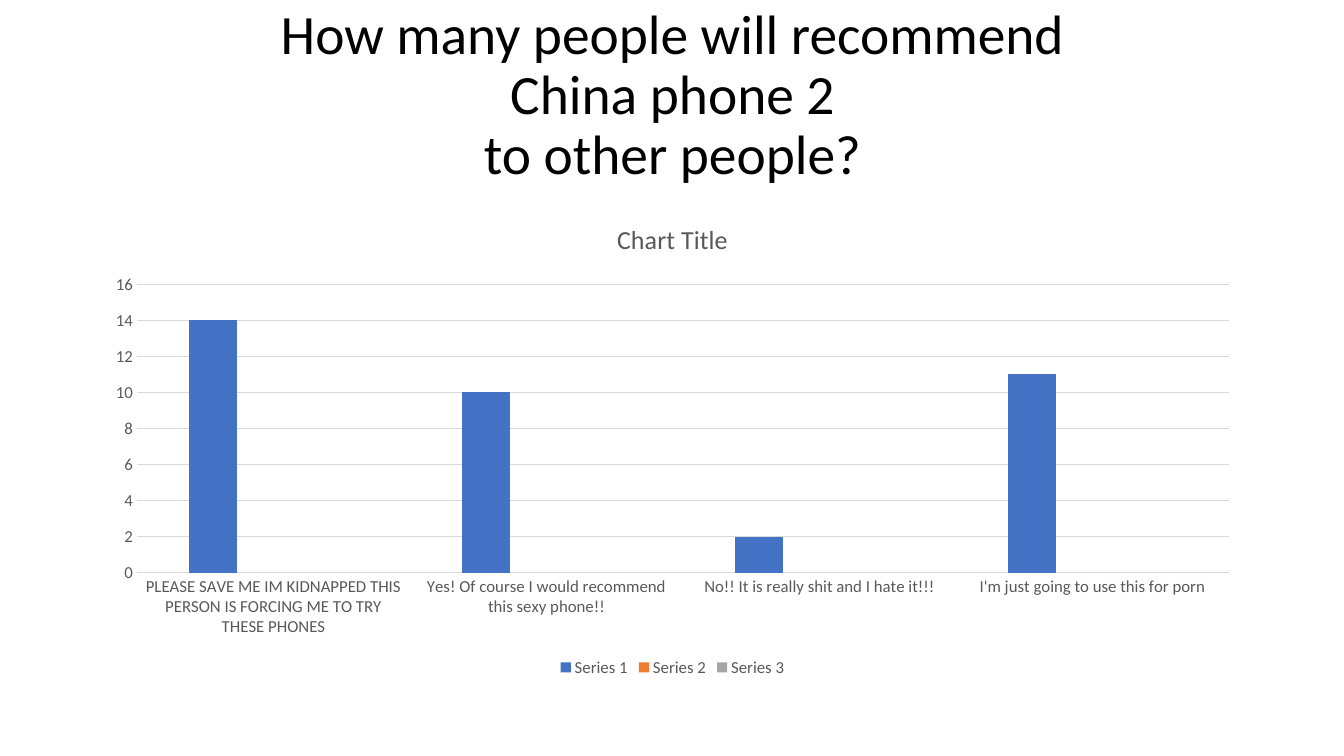
import pptx
import pptx.chart.data
import pptx.dml.color
import pptx.enum.chart
import pptx.enum.text
import pptx.util
from pptx.util import Inches

FONT = "Calibri"
COLORS = {"title": "000000", "label": "595959", "grid": "D9D9D9"}
ANSWERS = [
    "PLEASE SAVE ME IM KIDNAPPED THIS PERSON IS FORCING ME TO TRY THESE PHONES",
    "Yes! Of course I would recommend this sexy phone!!",
    "No!! It is really shit and I hate it!!!",
    "I'm just going to use this for porn",
]
SERIES = {
    "Series 1": ("4472C4", [14, 10, 2, 11]),
    "Series 2": ("ED7D31", [None] * len(ANSWERS)),
    "Series 3": ("A5A5A5", [None] * len(ANSWERS)),
}


def rgb(value):
    return pptx.dml.color.RGBColor.from_string(value)


def set_attributes(target, values):
    for name, value in values.items():
        setattr(target, name, value)


def style_font(font, size, color):
    set_attributes(font, {"name": FONT, "size": pptx.util.Pt(size), "bold": False})
    font.color.rgb = rgb(color)


def style_line(line):
    line.color.rgb = rgb(COLORS["grid"])
    line.width = pptx.util.Pt(0.75)


def place_question(slide, left, top, width, height):
    question = slide.shapes.title
    set_attributes(question, {"left": left, "top": top, "width": width, "height": height})
    frame = question.text_frame
    frame.text = "How many people will recommend\vChina phone 2\vto other people?"
    set_attributes(frame, {
        "word_wrap": True,
        "auto_size": pptx.enum.text.MSO_AUTO_SIZE.NONE,
        "vertical_anchor": pptx.enum.text.MSO_ANCHOR.MIDDLE,
    })
    paragraph = frame.paragraphs[0]
    set_attributes(paragraph, {
        "alignment": pptx.enum.text.PP_ALIGN.CENTER,
        "line_spacing": 0.9,
    })
    for run in paragraph.runs:
        style_font(run.font, 39.6, COLORS["title"])


def place_answer_chart(slide, left, top, width, height):
    data = pptx.chart.data.CategoryChartData()
    data.categories = ANSWERS
    for name, (_, votes) in SERIES.items():
        data.add_series(name, votes)
    chart = slide.shapes.add_chart(
        pptx.enum.chart.XL_CHART_TYPE.COLUMN_CLUSTERED, left, top, width, height, data
    ).chart
    style_font(chart.font, 10, COLORS["title"])

    heading = chart.chart_title.text_frame
    heading.text = "Chart Title"
    style_font(heading.paragraphs[0].runs[0].font, 18.6, COLORS["label"])
    chart.chart_title.include_in_layout = False

    chart.has_legend = True
    set_attributes(chart.legend, {
        "position": pptx.enum.chart.XL_LEGEND_POSITION.BOTTOM,
        "include_in_layout": False,
    })
    style_font(chart.legend.font, 12, COLORS["label"])

    plot = chart.plots[0]
    set_attributes(plot, {"gap_width": 219, "overlap": -27, "vary_by_categories": False})
    for series, (color, _) in zip(plot.series, SERIES.values()):
        series.format.fill.solid()
        series.format.fill.fore_color.rgb = rgb(color)

    no_ticks = pptx.enum.chart.XL_TICK_MARK.NONE
    for axis in (chart.category_axis, chart.value_axis):
        set_attributes(axis, {"major_tick_mark": no_ticks, "minor_tick_mark": no_ticks})
        style_font(axis.tick_labels.font, 12, COLORS["label"])
    style_line(chart.category_axis.format.line)
    set_attributes(chart.value_axis, {
        "minimum_scale": 0, "maximum_scale": 16, "major_unit": 2,
        "has_major_gridlines": True,
    })
    chart.value_axis.format.line.fill.background()
    style_line(chart.value_axis.major_gridlines.format.line)


def main():
    deck = pptx.Presentation()
    set_attributes(deck, {"slide_width": Inches(13.33), "slide_height": Inches(7.5)})
    slide = deck.slides.add_slide(deck.slide_layouts.get_by_name("Title Only"))
    left, width = Inches(0.92), Inches(11.5)
    place_question(slide, left, Inches(0.08), width, Inches(1.76))
    place_answer_chart(slide, left, Inches(2), width, Inches(4.76))
    deck.save("out.pptx")


if __name__ == "__main__":
    main()
